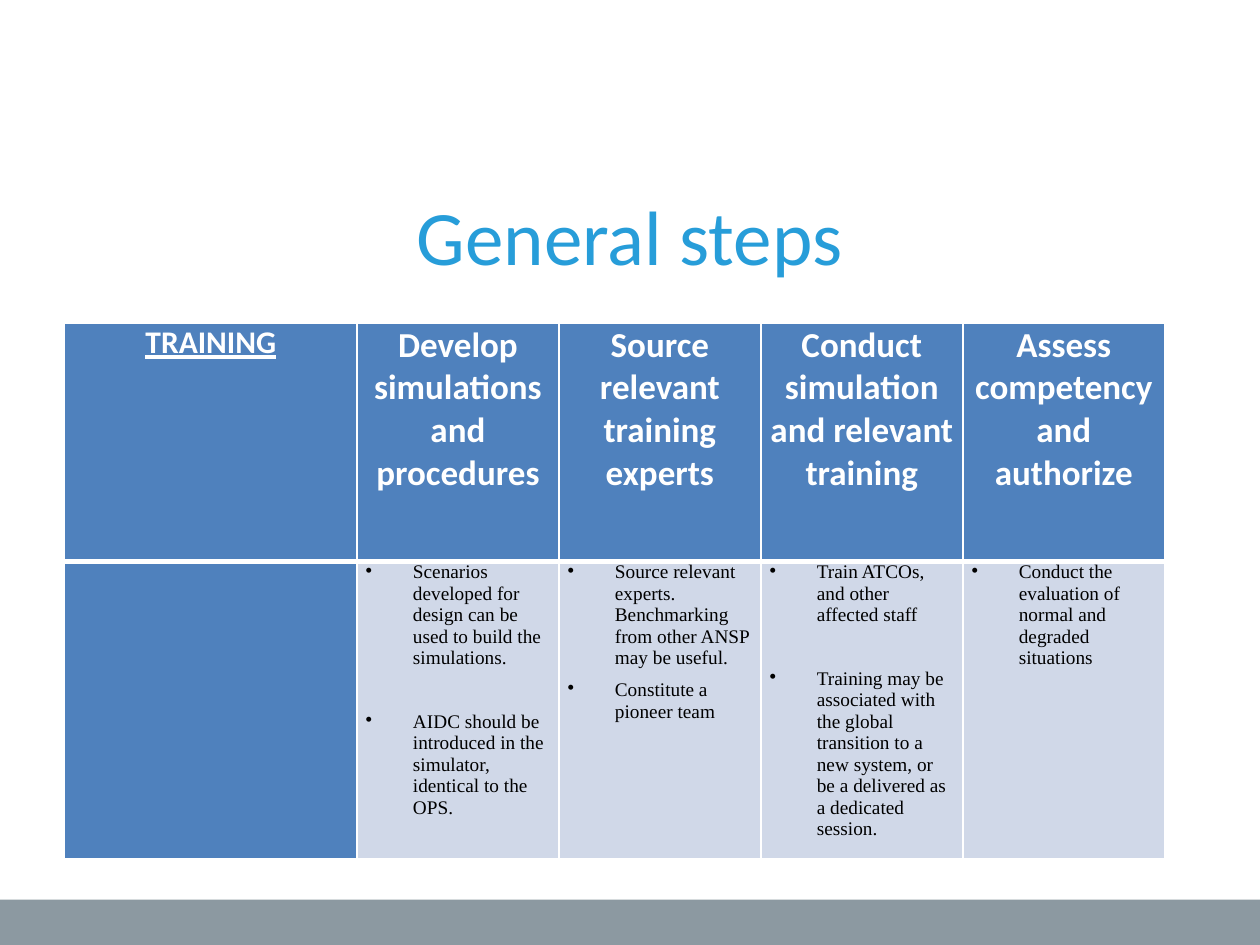
from dataclasses import dataclass

from lxml import etree
from pptx import Presentation
from pptx.dml.color import RGBColor
from pptx.enum import shapes, text
from pptx.oxml import ns
from pptx.util import Pt

COLOURS = {
    "title": "279DD9",
    "header": "4F81BD",
    "body": "D0D8E8",
    "white": "FFFFFF",
    "black": "000000",
    "footer": "8C99A1",
}
TITLE_FONT = {"name": "Calibri", "size": Pt(44)}
LABEL_FONT = {"name": "Calibri", "size": Pt(18), "bold": True, "underline": True}
HEADER_FONT = {"name": "Calibri", "size": Pt(20), "bold": True}
BODY_FONT = {"name": "Times New Roman", "size": Pt(11), "bold": False}
CELL_FORMAT = {
    "margin_left": Pt(5),
    "margin_right": Pt(5),
    "margin_top": Pt(0),
    "margin_bottom": Pt(0),
}
CENTRED = {"alignment": text.PP_ALIGN.CENTER}
SPACED = {**CENTRED, "space_before": Pt(6), "space_after": Pt(6)}
LABEL_WIDTH, STEP_WIDTH, ROW_HEIGHT = 167, 115.4, 136


@dataclass
class Step:
    heading: str
    bullets: list[str]
    gap: float = 0


STEPS = [
    Step(
        "Develop simulations and procedures",
        [
            "Scenarios developed for design can be used to build the simulations.",
            "AIDC should be introduced in the simulator, identical to the OPS.",
        ],
        gap=18.2,
    ),
    Step(
        "Source relevant training experts",
        [
            "Source relevant experts. Benchmarking from other ANSP may be useful.",
            "Constitute a pioneer team",
        ],
    ),
    Step(
        "Conduct simulation and relevant training",
        [
            "Train ATCOs, and other affected staff",
            "Training may be associated with the global transition to a new system, "
            "or be a delivered as a dedicated session.",
        ],
        gap=18.2,
    ),
    Step(
        "Assess competency and authorize",
        ["Conduct the evaluation of normal and degraded situations"],
    ),
]


def apply(target, values: dict) -> None:
    for name, value in values.items():
        setattr(target, name, value)


def paint(fill, colour: str) -> None:
    fill.solid()
    fill.fore_color.rgb = RGBColor.from_string(COLOURS[colour])


def write(paragraph, words: str, font: dict, colour: str, layout: dict) -> None:
    apply(paragraph, layout)
    span = paragraph.add_run()
    span.text = words
    apply(span.font, font)
    span.font.color.rgb = RGBColor.from_string(COLOURS[colour])


def add_bullet(paragraph) -> None:
    properties = paragraph._p.get_or_add_pPr()
    properties.set("marL", str(Pt(27)))
    properties.set("indent", str(-Pt(27)))
    etree.SubElement(properties, ns.qn("a:buChar")).set("char", "•")


def style_cell(cell, colour: str, bottom: float) -> None:
    apply(cell, CELL_FORMAT)
    properties = cell._tc.get_or_add_tcPr()
    for side, width in {"L": 1, "R": 1, "T": 1, "B": bottom}.items():
        line = etree.SubElement(properties, ns.qn(f"a:ln{side}"), w=str(Pt(width)))
        fill = etree.SubElement(line, ns.qn("a:solidFill"))
        etree.SubElement(fill, ns.qn("a:srgbClr"), val=COLOURS["white"])
    paint(cell.fill, colour)


def fill_step(table, column: int, step: Step) -> None:
    heading, body = table.cell(0, column), table.cell(1, column)
    style_cell(heading, "header", 3)
    style_cell(body, "body", 1)
    write(heading.text_frame.paragraphs[0], step.heading, HEADER_FONT, "white",
          {**SPACED, "space_before": Pt(0)})
    frame = body.text_frame
    for index, words in enumerate(step.bullets):
        paragraph = frame.add_paragraph() if index else frame.paragraphs[0]
        add_bullet(paragraph)
        before = Pt(step.gap if index else 0)
        write(paragraph, words, BODY_FONT, "black",
              {"space_before": before, "space_after": Pt(6)})


def add_steps_table(page) -> None:
    width = LABEL_WIDTH + STEP_WIDTH * len(STEPS)
    table = page.shapes.add_table(
        2, len(STEPS) + 1, Pt(37), Pt(185), Pt(width), Pt(2 * ROW_HEIGHT)
    ).table
    for row in table.rows:
        row.height = Pt(ROW_HEIGHT)
    for index, column in enumerate(table.columns):
        column.width = Pt(STEP_WIDTH if index else LABEL_WIDTH)
    style_cell(table.cell(0, 0), "header", 3)
    style_cell(table.cell(1, 0), "header", 1)
    label = table.cell(0, 0).text_frame.paragraphs[0]
    write(label, "TRAINING", LABEL_FONT, "white", CENTRED)
    for column, step in enumerate(STEPS, start=1):
        fill_step(table, column, step)


def add_footer(page) -> None:
    band = page.shapes.add_shape(
        shapes.MSO_SHAPE.RECTANGLE, Pt(0), Pt(514), Pt(720), Pt(26)
    )
    band.shadow.inherit = False
    paint(band.fill, "footer")
    band.line.fill.background()


def add_title(page) -> None:
    box = page.shapes.add_textbox(Pt(36), Pt(104), Pt(648), Pt(90))
    frame = box.text_frame
    apply(frame, {"word_wrap": True, "vertical_anchor": text.MSO_ANCHOR.TOP})
    write(frame.paragraphs[0], "General steps", TITLE_FONT, "title", CENTRED)


def main() -> None:
    deck = Presentation()
    apply(deck, {"slide_width": Pt(720), "slide_height": Pt(540)})
    page = deck.slides.add_slide(deck.slide_layouts[6])
    add_footer(page)
    add_title(page)
    add_steps_table(page)
    deck.save("out.pptx")


if __name__ == "__main__":
    main()
